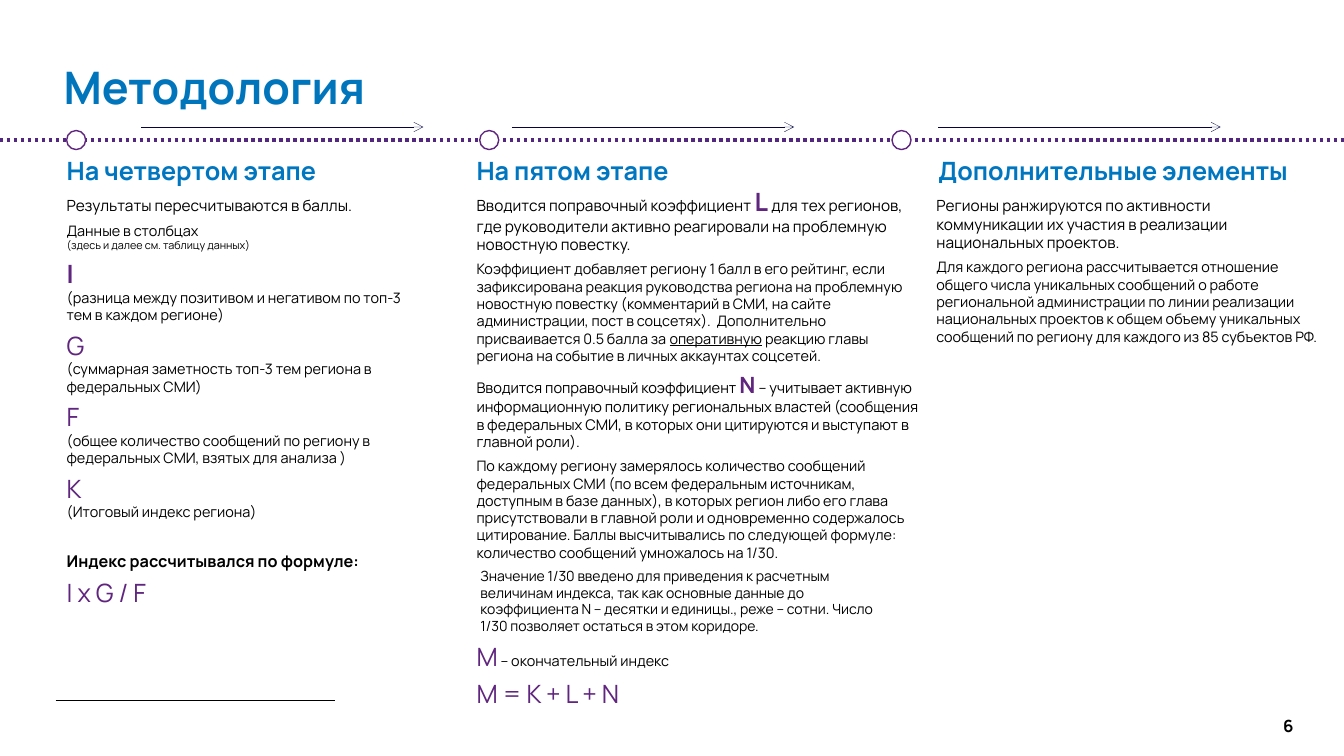
from copy import deepcopy
from dataclasses import dataclass
from typing import NamedTuple

from lxml import etree
from pptx import Presentation
from pptx import util as u
from pptx.dml.color import RGBColor
from pptx.enum import dml, shapes, text
from pptx.oxml.ns import qn

BLACK, WHITE = "000000", "FFFFFF"
BLUE, TITLE_BLUE = "0076C0", "0075BC"
PURPLE, DOT_PURPLE, ARROW_NAVY = "60257E", "53277D", "050340"
FONT = "Manrope"
GAP = 4.8
NO_INSETS = dict(margin_left=0, margin_right=0, margin_top=0, margin_bottom=0)
MIDDLE = dict(vertical_anchor=text.MSO_ANCHOR.MIDDLE)


class Run(NamedTuple):
    """A piece of text; a leading line feed starts a new line."""
    words: str
    size: float = 10.3
    color: str = BLACK
    bold: bool = False
    underline: bool = False


class Para(NamedTuple):
    runs: list[Run]
    before: float = GAP


class Box(NamedTuple):
    left: float
    top: float
    width: float
    height: float


@dataclass
class Stage:
    heading: str
    heading_left: float
    circle_left: float
    arrow_left: float
    body_box: Box
    body: list[Para]


def rgb(value: str) -> RGBColor:
    return RGBColor.from_string(value)


def set_all(target, formats: dict) -> None:
    for name, value in formats.items():
        setattr(target, name, value)


def write(frame, paras: list[Para], align=text.PP_ALIGN.LEFT, **formats) -> None:
    set_all(frame, dict(word_wrap=True, auto_size=text.MSO_AUTO_SIZE.NONE) | formats)
    for index, para in enumerate(paras):
        paragraph = frame.paragraphs[0] if index == 0 else frame.add_paragraph()
        set_all(paragraph, dict(alignment=align, space_before=u.Pt(para.before if index else 0)))
        for part in para.runs:
            line_break = paragraph._p.add_br() if part.words.startswith("\n") else None
            run = paragraph.add_run()
            run.text = part.words.lstrip("\n")
            set_all(run.font, dict(name=FONT, size=u.Pt(part.size), bold=part.bold,
                                   underline=part.underline))
            run.font.color.rgb = rgb(part.color)
            if line_break is not None:
                line_break.append(deepcopy(run._r.rPr))


def add_text(slide, box: Box, paras: list[Para], align=text.PP_ALIGN.LEFT, **formats) -> None:
    write(slide.shapes.add_textbox(*map(u.Cm, box)).text_frame, paras, align, **formats)


def add_rule(slide, left: float, right: float, y: float, color: str, width: float,
             dash=None, arrow: bool = False) -> None:
    """Draw a horizontal line, with an open arrowhead at its right end if asked."""
    rule = slide.shapes.add_connector(shapes.MSO_CONNECTOR.STRAIGHT,
                                      *map(u.Cm, (left, y, right, y)))
    rule.line.color.rgb = rgb(color)
    set_all(rule.line, dict(width=u.Pt(width), dash_style=dash))
    if arrow:
        etree.SubElement(rule.line._get_or_add_ln(), qn("a:tailEnd"), type="arrow")
    etree.SubElement(rule._element.spPr, qn("a:effectLst"))


def add_circle(slide, left: float) -> None:
    circle = slide.shapes.add_shape(shapes.MSO_SHAPE.OVAL,
                                    *map(u.Cm, (left, 3.29, 0.48, 0.48)))
    circle.shadow.inherit = False
    circle.fill.solid()
    circle.fill.fore_color.rgb = rgb(WHITE)
    circle.line.color.rgb = rgb(PURPLE)
    circle.line.width = u.Pt(1)


def variable(letter: str, meaning: str) -> Para:
    return Para([Run(letter, 18, PURPLE, letter == "I"), Run("\n" + meaning)])


FOURTH = [
    Para([Run("Результаты пересчитываются в баллы.", 11)]),
    Para([Run("Данные в столбцах"), Run("\n(здесь и далее см. таблицу данных)", 7.7)]),
    variable("I", "(разница между позитивом и негативом по топ-3 тем в каждом регионе)"),
    variable("G", "(суммарная заметность топ-3 тем региона в федеральных СМИ)"),
    variable("F", "(общее количество сообщений по региону в федеральных СМИ, "
                  "взятых для анализа )"),
    variable("K", "(Итоговый индекс региона)"),
    Para([Run("Индекс рассчитывался по формуле:", 11.6, bold=True)], before=21.9),
    Para([Run("I х G / F", 18, PURPLE)]),
]
FIFTH = [
    Para([Run("Вводится поправочный коэффициент ", 11), Run("L", 18, PURPLE, True),
          Run(" ", 11.6, bold=True),
          Run("для тех регионов, где руководители активно реагировали на проблемную "
              "новостную повестку.", 11)]),
    Para([Run("Коэффициент добавляет региону 1 балл в его рейтинг, если зафиксирована "
              "реакция руководства региона на проблемную новостную повестку (комментарий "
              "в СМИ, на сайте администрации, пост в соцсетях).  Дополнительно "
              "присваивается 0.5 балла за "),
          Run("оперативную", underline=True),
          Run(" реакцию главы региона на событие в личных аккаунтах соцсетей.")]),
    Para([Run("Вводится поправочный коэффициент ", 10.5), Run("N", 16, PURPLE, True),
          Run(" ", 11, bold=True),
          Run("– учитывает активную информационную политику региональных властей "
              "(сообщения в федеральных СМИ, в которых они цитируются и выступают в "
              "главной роли).", 10.5)]),
    Para([Run("По каждому региону замерялось количество сообщений федеральных СМИ (по "
              "всем федеральным источникам, доступным в базе данных), в которых регион "
              "либо его глава присутствовали в главной роли и одновременно содержалось "
              "цитирование. Баллы высчитывались по следующей формуле: количество "
              "сообщений умножалось на 1/30.")]),
    Para([Run("M", 18, PURPLE), Run(" – окончательный индекс")], before=57.4),
    Para([Run("M = K + L + N", 18, PURPLE)]),
]
EXTRA = [
    Para([Run("Регионы ранжируются по активности коммуникации их участия в реализации "
              "национальных проектов.", 11)]),
    Para([Run("Для каждого региона рассчитывается отношение общего числа уникальных "
              "сообщений о работе региональной администрации по линии реализации "
              "национальных проектов к общем объему уникальных сообщений по региону "
              "для каждого из 85 субъектов РФ.")]),
]
SCALE_NOTE = [
    Para([Run("Значение 1/30 введено для приведения к расчетным величинам индекса, так "
              "как основные данные до коэффициента N – десятки и единицы., реже – сотни. "
              "Число 1/30 позволяет остаться в этом коридоре.", 10)]),
]
STAGES = [
    Stage("На четвертом этапе", 1.68, 1.68, 3.56, Box(1.68, 4.95, 8.99, 10.52), FOURTH),
    Stage("На пятом этапе", 12.01, 12.09, 12.9, Box(12.01, 4.7, 11.18, 13.94), FIFTH),
    Stage("Дополнительные элементы", 23.65, 22.48, 23.65, Box(23.6, 4.95, 9.7, 4.83), EXTRA),
]


def main() -> None:
    deck = Presentation()
    deck.slide_width, deck.slide_height = u.Cm(33.87), u.Cm(19.05)
    slide = deck.slides.add_slide(deck.slide_layouts[5])

    title = slide.shapes.title
    set_all(title, dict(left=u.Cm(1.35), top=u.Cm(1.07), width=u.Cm(30.15), height=u.Cm(2.39)))
    write(title.text_frame, [Para([Run("Методология", 32, TITLE_BLUE, True)])], **MIDDLE)
    title.text_frame.paragraphs[0].line_spacing = 0.9

    add_rule(slide, 1.4, 8.43, 17.65, BLACK, 1.25)
    add_rule(slide, 0, 33.87, 3.53, DOT_PURPLE, 2.5, dml.MSO_LINE.ROUND_DOT)
    for stage in STAGES:
        add_circle(slide, stage.circle_left)
        add_rule(slide, stage.arrow_left, stage.arrow_left + 7.11, 3.2, ARROW_NAVY, 0.25,
                 arrow=True)
        add_text(slide, Box(stage.heading_left, 3.91, 9.7, 0.76),
                 [Para([Run(stage.heading, 18, BLUE, True)])], **NO_INSETS)
        add_text(slide, stage.body_box, stage.body, **NO_INSETS)

    add_text(slide, Box(11.86, 14.17, 10.74, 1.98), SCALE_NOTE)
    add_text(slide, Box(31.55, 17.78, 1.3, 1.02), [Para([Run("6", 12, bold=True)])],
             text.PP_ALIGN.RIGHT, **MIDDLE)
    deck.save("out.pptx")


if __name__ == "__main__":
    main()
